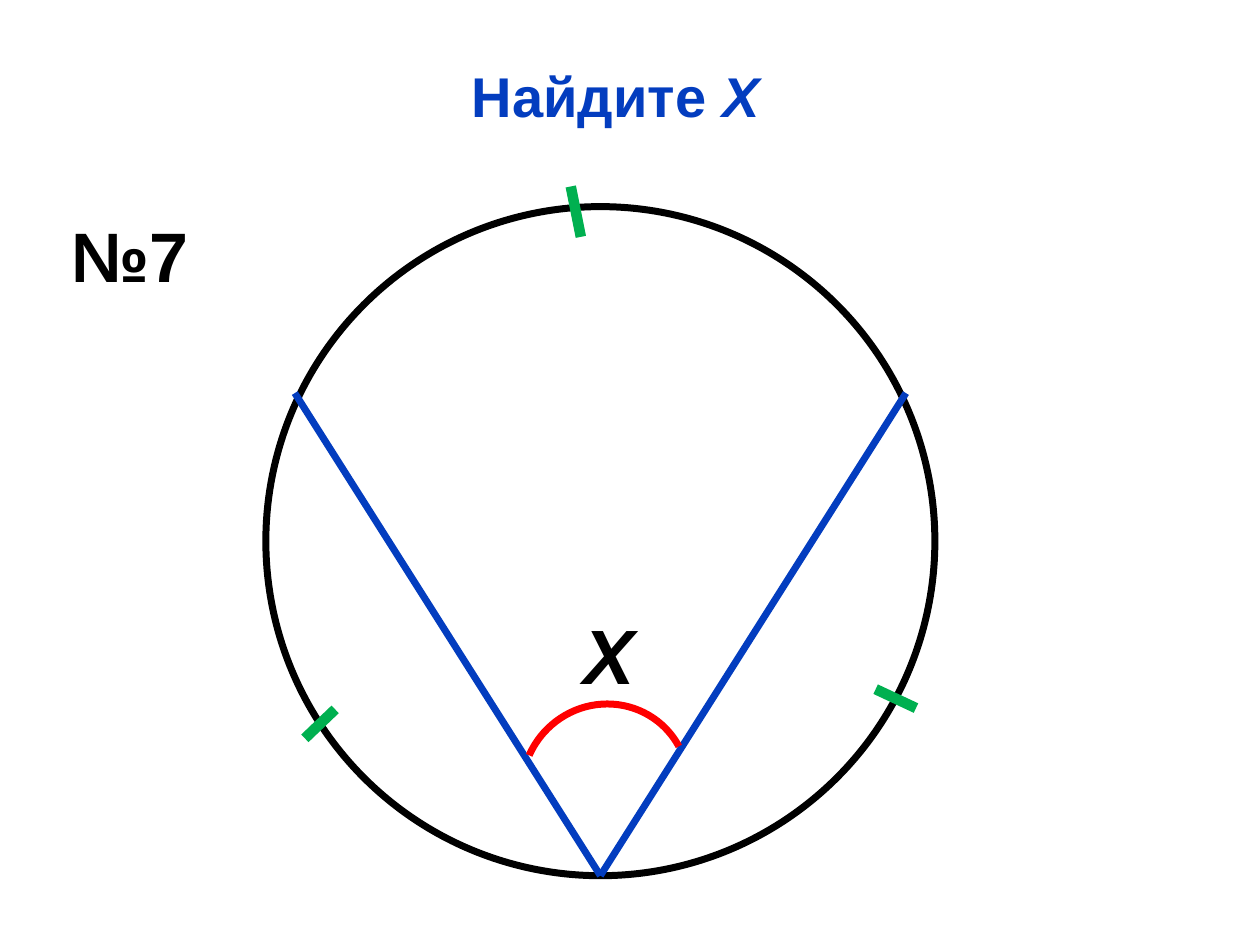
from pptx import Presentation
from pptx.dml.color import RGBColor
from pptx.enum.shapes import MSO_CONNECTOR, MSO_SHAPE
from pptx.enum.text import MSO_AUTO_SIZE, PP_ALIGN
from pptx.oxml.ns import qn
from pptx.util import Inches, Pt
from lxml import etree

WHITE = RGBColor(0xFF, 0xFF, 0xFF)
BLACK = RGBColor(0x00, 0x00, 0x00)
BLUE = RGBColor(0x03, 0x3D, 0xBF)
RED = RGBColor(0xFF, 0x00, 0x00)
GREEN = RGBColor(0x00, 0xB0, 0x50)

STRAIGHT = MSO_CONNECTOR.STRAIGHT
OVAL, ARC = MSO_SHAPE.OVAL, MSO_SHAPE.ARC
LEFT, CENTER = PP_ALIGN.LEFT, PP_ALIGN.CENTER
FIT_TEXT = MSO_AUTO_SIZE.SHAPE_TO_FIT_TEXT


def add_label(slide, box, runs, size, color, align=LEFT):
    """Bold text; runs are (text, italic) pairs."""
    frame = slide.shapes.add_textbox(*map(Inches, box)).text_frame
    frame.word_wrap = True
    frame.auto_size = FIT_TEXT
    paragraph = frame.paragraphs[0]
    paragraph.alignment = align
    font = paragraph.font
    font.name, font.size, font.bold = "Arial", Pt(size), True
    font.color.rgb = color
    for text, italic in runs:
        run = paragraph.add_run()
        run.text = text
        run.font.italic = italic


def add_segment(slide, start, end, color, width):
    segment = slide.shapes.add_connector(STRAIGHT, *map(Inches, (*start, *end)))
    segment.line.color.rgb = color
    segment.line.width = Pt(width)
    etree.SubElement(segment._element.spPr, qn("a:effectLst"))


def add_curve(slide, kind, box, color):
    curve = slide.shapes.add_shape(kind, *map(Inches, box))
    curve.shadow.inherit = False
    curve.line.color.rgb = color
    curve.line.width = Pt(4)
    return curve


def draw_inscribed_angle(slide, left, top, diameter):
    """Circle with an inscribed angle X and marks on three equal arcs."""
    def at(x, y):
        return left + x, top + y

    circle = add_curve(slide, OVAL, (left, top, diameter, diameter), BLACK)
    circle.fill.solid()
    circle.fill.fore_color.rgb = WHITE

    # Sides of the angle, meeting at the bottom of the circle
    vertex = at(diameter / 2, diameter)
    for side_end in (at(0.23, 1.48), at(5.08, 1.48)):
        add_segment(slide, side_end, vertex, BLUE, 4)

    # Angle arc and its label
    angle_arc = add_curve(slide, ARC, (*at(2.04, 3.94), 1.31, 1.34), RED)
    angle_arc.fill.background()
    angle_arc.adjustments[0] = 204.62
    angle_arc.adjustments[1] = 65.29
    angle_arc.rotation = 221.9
    add_label(slide, (*at(2.42, 3.13), 0.94, 0.84), [("Х", True)], 44, BLACK)

    # Equal-arc marks
    equal_marks = [
        (at(0.31, 4.22), at(0.55, 3.99)),
        (at(2.42, -0.16), at(2.5, 0.24)),
        (at(4.84, 3.83), at(5.16, 3.98)),
    ]
    for start, end in equal_marks:
        add_segment(slide, start, end, GREEN, 6)


def main():
    prs = Presentation()
    prs.slide_width, prs.slide_height = Inches(10), Inches(7.5)
    slide = prs.slides.add_slide(prs.slide_layouts[6])

    # Task heading
    add_label(slide, (0.43, 0.44, 8.91, 0.63),
              [("Найдите ", False), ("Х", True)], 32, BLUE, CENTER)
    draw_inscribed_angle(slide, 2.11, 1.64, 5.31)
    # Task number
    add_label(slide, (0.47, 1.64, 1.48, 0.77), [("№7", False)], 40, BLACK)

    prs.save("out.pptx")


if __name__ == "__main__":
    main()
